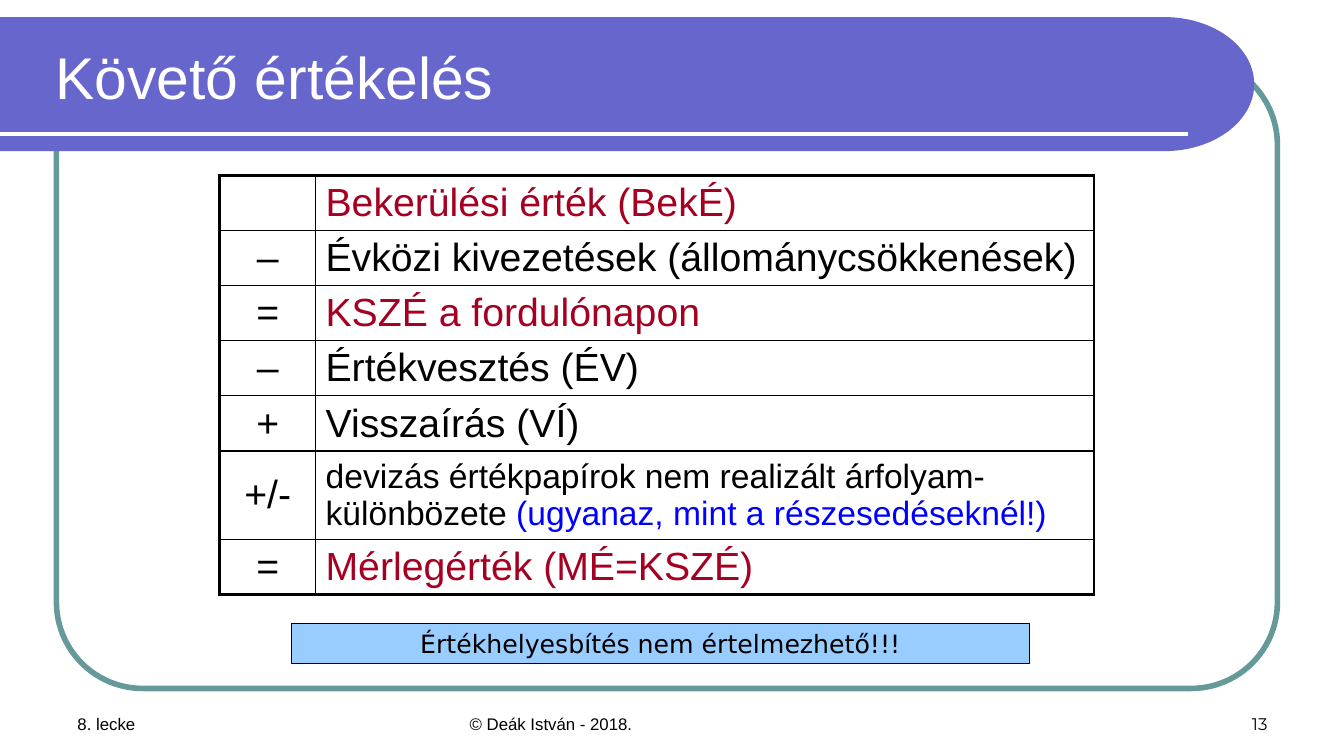
import math
import pptx
import pptx.util
import pptx.dml.color
import pptx.enum.shapes
import pptx.enum.text
import pptx.oxml
import pptx.oxml.ns
from dataclasses import dataclass

PX = 9144  # EMU in one px, 100 px to the inch
ALIGN = pptx.enum.text.PP_ALIGN
ANCHOR = pptx.enum.text.MSO_ANCHOR
SHAPE = pptx.enum.shapes.MSO_SHAPE


@dataclass(frozen=True)
class Theme:
    band: str = "6666CC"
    frame: str = "669999"
    white: str = "FFFFFF"
    ink: str = "000000"
    red: str = "A50021"
    blue: str = "0000FF"
    note: str = "99CCFF"
    font: str = "Arial"
    title: int = 42
    body: int = 28
    small: int = 24
    label: int = 18
    foot: int = 12


T = Theme()

# Sign, then runs of text, colour and size
ROWS = [
    ("", [("Bekerülési érték (BekÉ)", T.red, T.body)]),
    ("–", [("Évközi kivezetések (állománycsökkenések)", T.ink, T.body)]),
    ("=", [("KSZÉ a fordulónapon", T.red, T.body)]),
    ("–", [("Értékvesztés (ÉV)", T.ink, T.body)]),
    ("+", [("Visszaírás (VÍ)", T.ink, T.body)]),
    ("+/-", [("devizás értékpapírok nem realizált árfolyam-különbözete ", T.ink, T.small),
             ("(ugyanaz, mint a részesedéseknél!)", T.blue, T.small)]),
    ("=", [("Mérlegérték (MÉ=KSZÉ)", T.red, T.body)]),
]


def px(*nums):
    return [pptx.util.Emu(round(n * PX)) for n in nums]


def rgb(code):
    return pptx.dml.color.RGBColor.from_string(code)


def write(frame, runs, align=ALIGN.LEFT, font=T.font):
    para = frame.paragraphs[0]
    para.alignment = align
    for text, color, size in runs:
        run = para.add_run()
        run.text = text
        run.font.name = font
        run.font.size = pptx.util.Pt(size)
        run.font.color.rgb = rgb(color)


def paint(shape, fill=None, line=None, width=1):
    shape.shadow.inherit = False
    if fill:
        shape.fill.solid()
        shape.fill.fore_color.rgb = rgb(fill)
    else:
        shape.fill.background()
    if line:
        shape.line.color.rgb = rgb(line)
        shape.line.width = pptx.util.Pt(width)
    else:
        shape.line.fill.background()


def label(slide, box, runs, anchor, align=ALIGN.LEFT, font=T.font):
    frame = slide.shapes.add_textbox(*px(*box)).text_frame
    frame.word_wrap = True
    frame.vertical_anchor = anchor
    write(frame, runs, align, font)
    return frame


def border(cell, edges):
    props = cell._tc.get_or_add_tcPr()
    spot = 0
    for side in ("L", "R", "T", "B"):
        width = pptx.util.Pt(2.25 if side in edges else 1)
        props.insert(spot, pptx.oxml.parse_xml(
            f'<a:ln{side} {pptx.oxml.ns.nsdecls("a")} w="{int(width)}"><a:solidFill>'
            f'<a:srgbClr val="{T.ink}"/></a:solidFill></a:ln{side}>'))
        spot += 1


def draw_frame(slide, box):
    shape = slide.shapes.add_shape(SHAPE.ROUNDED_RECTANGLE, *px(*box))
    shape.adjustments[0] = 0.137
    paint(shape, line=T.frame, width=4)


def draw_band(slide, box):
    left, top, wide, high = box
    # Band with a half-ellipse at its right end
    bend, half = 89, high / 2
    hub = left + wide - bend
    steps = 48
    curve = [(hub + bend * math.sin(math.pi * i / steps),
              top + half - half * math.cos(math.pi * i / steps)) for i in range(steps + 1)]
    pen = slide.shapes.build_freeform(left * PX, top * PX)
    pen.add_line_segments([px(*spot) for spot in curve] + [px(left, top + high)])
    paint(pen.convert_to_shape(), fill=T.band)
    # Rule under the title
    rule = slide.shapes.add_connector(
        pptx.enum.shapes.MSO_CONNECTOR.STRAIGHT,
        *px(left, top + 116, left + wide - 66, top + 116))
    rule.line.color.rgb = rgb(T.white)
    rule.line.width = pptx.util.Pt(3)
    rule._element.spPr.append(
        pptx.oxml.parse_xml(f'<a:effectLst {pptx.oxml.ns.nsdecls("a")}/>'))
    # Title
    frame = label(slide, (left + 28, top + 8, wide - 75, 100),
                  [("Követő értékelés", T.white, T.title)], ANCHOR.MIDDLE)
    frame.margin_left = px(27)[0]


def draw_table(slide, box):
    table = slide.shapes.add_table(len(ROWS), 2, *px(*box)).table
    table.first_row = table.horz_banding = False
    sign_w, line_h = 95, 54
    table.columns[0].width, table.columns[1].width = px(sign_w, box[2] - sign_w)
    tall = box[3] - line_h * (len(ROWS) - 1)
    for i, (sign, runs) in enumerate(ROWS):
        table.rows[i].height = px(tall if len(runs) > 1 else line_h)[0]
        edge = "T" if i == 0 else "B" if i == len(ROWS) - 1 else ""
        parts = ([(sign, T.ink, T.body)] if sign else [], ALIGN.CENTER, "L"), (runs, ALIGN.LEFT, "R")
        for j, (words, align, side) in enumerate(parts):
            cell = table.cell(i, j)
            cell.fill.background()
            cell.margin_top = cell.margin_bottom = px(4)[0]
            cell.vertical_anchor = ANCHOR.MIDDLE
            write(cell.text_frame, words, align)
            border(cell, edge + side)


def draw_note(slide, box):
    shape = slide.shapes.add_shape(SHAPE.RECTANGLE, *px(*box))
    paint(shape, T.note, T.ink, 0.75)
    frame = shape.text_frame
    frame.word_wrap = False
    frame.vertical_anchor = ANCHOR.MIDDLE
    write(frame, [("Értékhelyesbítés nem értelmezhető!!!", T.ink, T.label)],
          ALIGN.CENTER, "DejaVu Sans")


def draw_foot(slide, box):
    left, top, wide, high = box
    side, mid = 311, 422
    for x, w, text, align, font in (
            (left, side, "8. lecke", ALIGN.LEFT, T.font),
            (left + (wide - mid) // 2, mid, "© Deák István - 2018.", ALIGN.LEFT, T.font),
            (left + wide - side, side, "13", ALIGN.RIGHT, "Montserrat")):
        label(slide, (x, top, w, high), [(text, T.ink, T.foot)], ANCHOR.BOTTOM, align, font)


def main():
    deck = pptx.Presentation()
    deck.slide_width, deck.slide_height = px(1333, 750)
    slide = deck.slides.add_slide(deck.slide_layouts[6])
    draw_frame(slide, (56, 58, 1211, 625))
    draw_band(slide, (0, 17, 1244, 133))
    draw_table(slide, (218, 174, 867, 409))
    draw_note(slide, (289, 619, 732, 39))
    draw_foot(slide, (67, 683, 1200, 50))
    deck.save("out.pptx")


if __name__ == "__main__":
    main()
